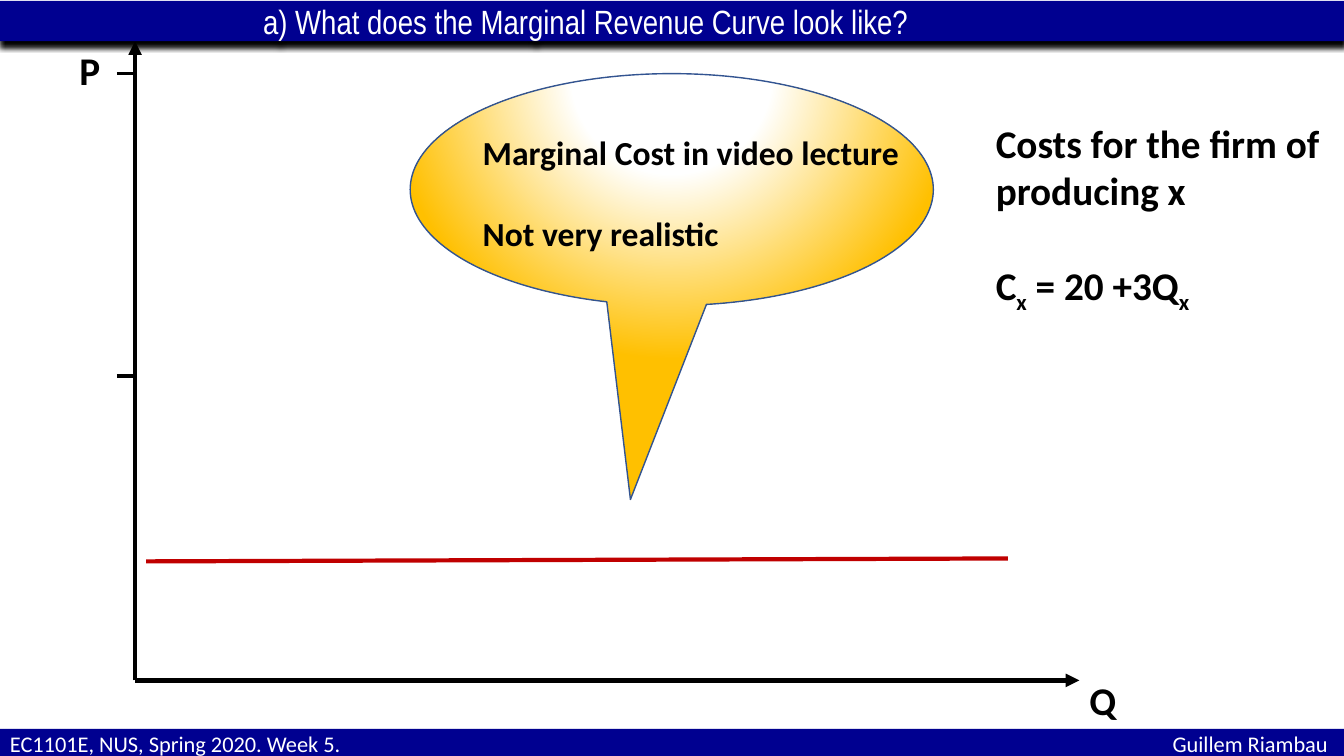
from lxml.etree import SubElement
from pptx import Presentation
from pptx.dml.color import RGBColor
from pptx.enum.shapes import MSO_CONNECTOR, MSO_SHAPE
from pptx.enum.text import MSO_ANCHOR, PP_ALIGN
from pptx.oxml.ns import qn
from pptx.util import Pt

WIDTH, HEIGHT = 960, 540
NAVY, WHITE, BLACK, RED, GOLD = "000090", "FFFFFF", "000000", "C00000", "FFC000"
ORIGIN_X, ORIGIN_Y = 96.5, 486


def colour(value):
    """Turn a hex string into a colour."""
    return RGBColor.from_string(value)


def add_xml(parent, tag, **attributes):
    """Append a DrawingML child element."""
    return SubElement(parent, qn(f"a:{tag}"), attributes)


def add_span(para, text, size, ink, font="Calibri", bold=False, baseline=0):
    """Append one formatted run to a paragraph."""
    span = para.add_run()
    span.text = text
    span.font.size, span.font.name, span.font.bold = Pt(size), font, bold
    span.font.color.rgb = colour(ink)
    if baseline:
        span.font._element.set("baseline", str(baseline))


def add_bar(page, top, height, text, size, font, indent):
    """Draw a full-width navy bar with a shadow and left-aligned text."""
    bar = page.shapes.add_shape(MSO_SHAPE.RECTANGLE, 0, Pt(top), Pt(WIDTH), Pt(height))
    bar.fill.solid()
    bar.fill.fore_color.rgb = colour(NAVY)
    bar.line.fill.background()
    bar.shadow.inherit = False
    effects = bar.element.spPr.find(qn("a:effectLst"))
    shade = add_xml(effects, "outerShdw", blurRad=str(Pt(4)), dist=str(Pt(4)),
                    dir="5400000", algn="t", rotWithShape="0")
    add_xml(shade, "srgbClr", val=BLACK)
    frame = bar.text_frame
    frame.vertical_anchor = MSO_ANCHOR.MIDDLE
    frame.margin_left = Pt(indent)
    frame.paragraphs[0].alignment = PP_ALIGN.LEFT
    add_span(frame.paragraphs[0], text, size, WHITE, font)


def add_text(page, left, top, width, height, lines, size, ink=BLACK, bold=True,
             gap=0, align=PP_ALIGN.LEFT):
    """Place a text box; each line is a list of (text, baseline) runs."""
    box = page.shapes.add_textbox(Pt(left), Pt(top), Pt(width), Pt(height))
    frame = box.text_frame
    frame.word_wrap = True
    for number, spans in enumerate(lines):
        para = frame.add_paragraph() if number else frame.paragraphs[0]
        para.alignment = align
        para.space_before = Pt(gap if number else 0)
        for text, baseline in spans:
            add_span(para, text, size, ink, bold=bold, baseline=baseline)


def add_line(page, start, end, width, ink=BLACK, arrow=False):
    """Draw a straight line, optionally with an arrowhead at its end."""
    line = page.shapes.add_connector(MSO_CONNECTOR.STRAIGHT, *map(Pt, start + end))
    line.line.width = Pt(width)
    line.line.color.rgb = colour(ink)
    if arrow:
        add_xml(line.line._get_or_add_ln(), "tailEnd", type="triangle")
    add_xml(line.element.spPr, "effectLst")


def add_callout(page, left, top, width, height, tip):
    """Draw the elliptical callout with a white to gold radial gradient."""
    callout = page.shapes.add_shape(MSO_SHAPE.OVAL_CALLOUT, Pt(left), Pt(top),
                                    Pt(width), Pt(height))
    callout.adjustments[0], callout.adjustments[1] = tip
    callout.shadow.inherit = False
    callout.line.color.rgb = colour("325491")
    callout.line.width = Pt(1)
    callout.fill.gradient()
    gradient = callout.element.spPr.find(qn("a:gradFill"))
    gradient.clear()
    stops = add_xml(gradient, "gsLst")
    for position, ink in ((0, WHITE), (35, WHITE), (100, GOLD)):
        stop = add_xml(stops, "gs", pos=str(position * 1000))
        add_xml(stop, "srgbClr", val=ink)
    circle = add_xml(gradient, "path", path="circle")
    add_xml(circle, "fillToRect", l="50000", t="-80000", r="50000", b="180000")


def main():
    """Build the slide and save it."""
    deck = Presentation()
    deck.slide_width, deck.slide_height = Pt(WIDTH), Pt(HEIGHT)
    page = deck.slides.add_slide(deck.slide_layouts[6])

    add_bar(page, 520.6, 21.6, "EC1101E, NUS, Spring 2020. Week 5.", 16, "Calibri", 7.2)
    add_text(page, 760, 518.2, 195.5, 27, [[("Guillem Riambau", 0)]], 16, WHITE, False,
             align=PP_ALIGN.RIGHT)

    for end in ((ORIGIN_X, 29.5), (771, ORIGIN_Y)):
        add_line(page, (ORIGIN_X, ORIGIN_Y), end, 3.25, arrow=True)
    for name, left, top in (("P", 49.7, 29.5), ("Q", 771, 479.5)):
        add_text(page, left, top, 109.4, 41, [[(name, 0)]], 28)
    add_bar(page, 0.7, 28.8, "a) What does the Marginal Revenue Curve look like?",
            24, "Arial Narrow", 187.9)
    for height in (52.6, 268.6):
        add_line(page, (83.5, height), (ORIGIN_X, height), 2.25)
    add_line(page, (720, 398.9), (104.4, 401), 3, RED)

    add_callout(page, 293, 52.6, 373.7, 165.6, (-0.079, 1.337))
    add_text(page, 337.7, 90.5, 319, 95,
             [[("Marginal Cost in video lecture", 0)], [("Not very realistic", 0)]],
             24, gap=29.3)
    add_text(page, 704.2, 81.7, 255.8, 144,
             [[("Costs for the firm of producing x", 0)],
              [("C", 0), ("x", -25000), (" = 20 +3Q", 0), ("x", -25000)]],
             28, gap=34.2)
    deck.save("out.pptx")


if __name__ == "__main__":
    main()
